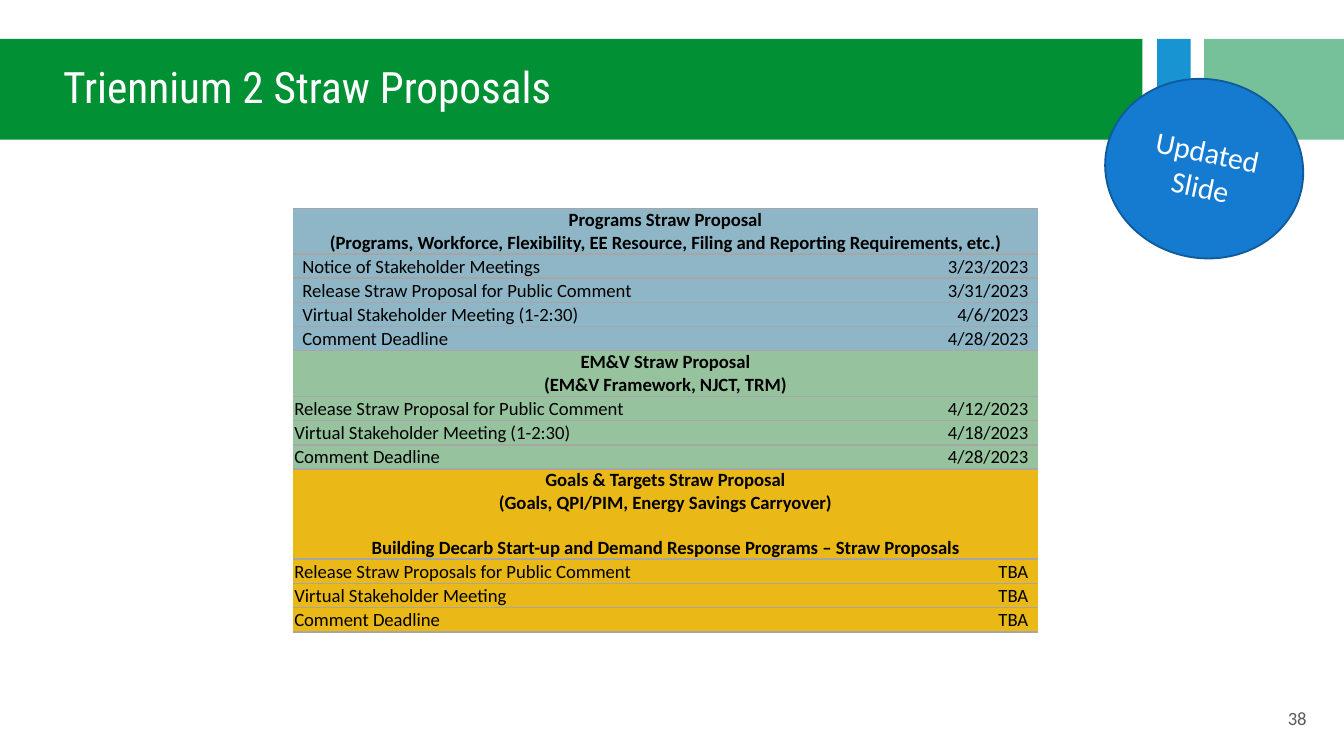
"""Build the slide of Triennium 2 straw proposal dates."""
from copy import deepcopy
from dataclasses import dataclass

from lxml.etree import SubElement
from pptx import Presentation
from pptx.dml.color import RGBColor
from pptx.enum.shapes import MSO_SHAPE as Shape
from pptx.enum.text import MSO_ANCHOR as Anchor, MSO_AUTO_SIZE as AutoSize, PP_ALIGN as Align
from pptx.oxml.ns import qn
from pptx.util import Inches, Pt


@dataclass(frozen=True)
class Theme:
    green: str = "029035"
    blue: str = "1894D2"
    mint: str = "77C19A"
    badge: str = "147BD1"
    badge_line: str = "0F5B9B"
    programs: str = "8FB6C7"
    evaluation: str = "96C39D"
    goals: str = "EAB817"
    border: str = "A6A6A6"
    white: str = "FFFFFF"
    black: str = "000000"
    gray: str = "595959"
    title_font: str = "Roboto Condensed"
    body_font: str = "Calibri"
    title_size: float = 23.2
    badge_size: float = 16
    body_size: float = 10


theme = Theme()
NO_GRID_STYLE = "{2D5ABB26-0587-4C30-8999-92F81FD0307C}"


def write(frame, text, size=theme.body_size, color=theme.black, font=theme.body_font,
          bold=False, align=Align.LEFT, anchor=Anchor.BOTTOM):
    frame.word_wrap = True
    frame.vertical_anchor = anchor
    for index, line in enumerate(text.split("\n")):
        para = frame.paragraphs[0] if index == 0 else frame.add_paragraph()
        para.text = line
        para.alignment = align
        if index:
            para.space_before = Pt(size * 1.2)
        for span in para.runs:
            span.font.name = font
            span.font.size = Pt(size)
            span.font.bold = bold
            span.font.color.rgb = RGBColor.from_string(color)
        for line_break in para._p.findall(qn("a:br")):
            line_break.append(deepcopy(para.runs[0]._r.find(qn("a:rPr"))))


def add_filled(page, kind, left, top, width, height, color):
    shape = page.shapes.add_shape(kind, Inches(left), Inches(top), Inches(width), Inches(height))
    shape.shadow.inherit = False
    shape.fill.solid()
    shape.fill.fore_color.rgb = RGBColor.from_string(color)
    shape.line.fill.background()
    return shape


deck = Presentation()
deck.slide_width, deck.slide_height = Inches(10), Inches(10 * 9 / 16)
page = deck.slides.add_slide(deck.slide_layouts[5])

for left, width, color in [(8.61, 0.25, theme.blue), (8.96, 1.04, theme.mint),
                           (-0.01, 8.51, theme.green)]:
    add_filled(page, Shape.RECTANGLE, left, 0.29, width, 0.75, color)

number = page.shapes.add_textbox(Inches(7.57), Inches(5.21), Inches(2.25), Inches(0.3))
write(number.text_frame, "38", color=theme.gray, align=Align.RIGHT, anchor=Anchor.TOP)

title = page.shapes.title
title.left, title.top, title.width, title.height = (Inches(n) for n in (-0.01, 0.29, 8.51, 0.75))
title.element.getparent().append(title.element)
write(title.text_frame, "Triennium 2 Straw Proposals", size=theme.title_size,
      color=theme.white, font=theme.title_font, anchor=Anchor.MIDDLE)
title.text_frame.auto_size = AutoSize.NONE
title.text_frame.margin_left = Inches(0.48)
title.text_frame.paragraphs[0].line_spacing = 0.9

sections = [
    (theme.programs, 0.07, 0.34,
     "Programs Straw Proposal\v"
     "(Programs, Workforce, Flexibility, EE Resource, Filing and Reporting Requirements, etc.)",
     [("Notice of Stakeholder Meetings", "3/23/2023"),
      ("Release Straw Proposal for Public Comment", "3/31/2023"),
      ("Virtual Stakeholder Meeting (1-2:30)", "4/6/2023"),
      ("Comment Deadline", "4/28/2023")]),
    (theme.evaluation, 0.01, 0.34,
     "EM&V Straw Proposal\v(EM&V Framework, NJCT, TRM)",
     [("Release Straw Proposal for Public Comment", "4/12/2023"),
      ("Virtual Stakeholder Meeting (1-2:30)", "4/18/2023"),
      ("Comment Deadline", "4/28/2023")]),
    (theme.goals, 0.01, 0.67,
     "Goals & Targets Straw Proposal\v(Goals, QPI/PIM, Energy Savings Carryover)\n"
     "Building Decarb Start-up and Demand Response Programs – Straw Proposals",
     [("Release Straw Proposals for Public Comment", "TBA"),
      ("Virtual Stakeholder Meeting", "TBA"),
      ("Comment Deadline", "TBA")]),
]
row_count = sum(1 + len(steps) for *_, steps in sections)
table_frame = page.shapes.add_table(row_count, 2, Inches(2.18), Inches(1.55),
                                    Inches(5.54), Inches(3.15))
schedule = table_frame.table
schedule.first_row = schedule.horz_banding = False
for style in table_frame.element.iter(qn("a:tableStyleId")):
    style.text = NO_GRID_STYLE
schedule.columns[0].width, schedule.columns[1].width = Inches(4.49), Inches(1.05)

row = 0
for color, indent, heading_height, heading, steps in sections:
    for offset, texts in enumerate([(heading, ""), *steps]):
        is_heading = offset == 0
        schedule.rows[row].height = Inches(heading_height if is_heading else 0.18)
        for column, text in enumerate(texts):
            cell = schedule.cell(row, column)
            cell.margin_left = Inches(0.07 if is_heading or column else indent)
            cell.margin_right = Inches(0.07)
            cell.margin_top = cell.margin_bottom = 0
            properties = cell._tc.get_or_add_tcPr()
            for side in ("a:lnT", "a:lnB"):
                edge = SubElement(properties, qn(side), w=str(Pt(1)))
                SubElement(SubElement(edge, qn("a:solidFill")), qn("a:srgbClr"), val=theme.border)
            cell.fill.solid()
            cell.fill.fore_color.rgb = RGBColor.from_string(color)
            cell.vertical_anchor = Anchor.BOTTOM
            if text:
                align = Align.CENTER if is_heading else (Align.LEFT, Align.RIGHT)[column]
                write(cell.text_frame, text, bold=is_heading, align=align)
        if is_heading:
            schedule.cell(row, 0).merge(schedule.cell(row, 1))
        row += 1

badge = add_filled(page, Shape.OVAL, 8.22, 0.59, 1.48, 1.33, theme.badge)
badge.line.color.rgb = RGBColor.from_string(theme.badge_line)
badge.line.width = Pt(1)
badge.rotation = 11.7
write(badge.text_frame, "Updated Slide", size=theme.badge_size, color=theme.white,
      align=Align.CENTER, anchor=Anchor.MIDDLE)

deck.save("out.pptx")
